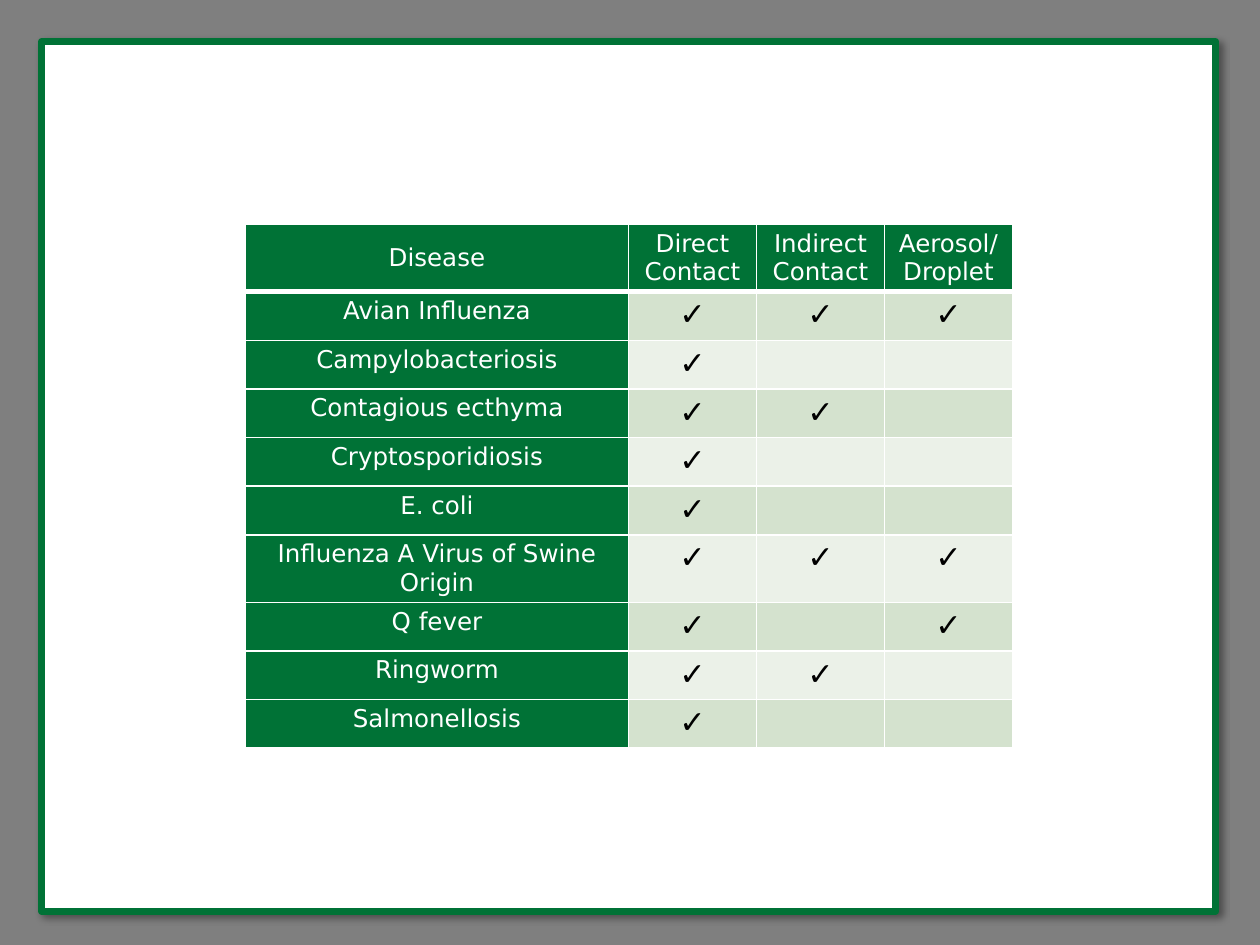
import lxml.etree
import pptx
import pptx.dml.color
import pptx.enum.shapes
import pptx.enum.text
import pptx.oxml
import pptx.oxml.ns
import pptx.util

Cm = pptx.util.Cm
Pt = pptx.util.Pt
RGBColor = pptx.dml.color.RGBColor

GREEN = RGBColor(0x00, 0x72, 0x36)
GRAY = RGBColor(0x7F, 0x7F, 0x7F)
WHITE = RGBColor(0xFF, 0xFF, 0xFF)
BLACK = RGBColor(0x00, 0x00, 0x00)
BANDS = (RGBColor(0xD4, 0xE2, 0xCE), RGBColor(0xEB, 0xF1, 0xE8))

FONT = "DejaVu Sans"
CHECK = "✓"
HEADERS = ("Disease", "Direct Contact", "Indirect Contact", "Aerosol/ Droplet")
# Each disease with its routes: direct contact, indirect contact, aerosol/droplet
DISEASES = (
    ("Avian Influenza", (True, True, True)),
    ("Campylobacteriosis", (True, False, False)),
    ("Contagious ecthyma", (True, True, False)),
    ("Cryptosporidiosis", (True, False, False)),
    ("E. coli", (True, False, False)),
    ("Influenza A Virus of Swine Origin", (True, True, True)),
    ("Q fever", (True, False, True)),
    ("Ringworm", (True, True, False)),
    ("Salmonellosis", (True, False, False)),
)
COLUMN_WIDTHS = (7.72, 2.58, 2.58, 2.58)
ROW_HEIGHT = 0.98


def add_shadow(sp):
    effects = pptx.oxml.parse_xml(
        f'<a:effectLst {pptx.oxml.ns.nsdecls("a")}>'
        f'<a:outerShdw blurRad="{Pt(4)}" dist="{Pt(3)}" dir="2700000" '
        'algn="tl" rotWithShape="0"><a:srgbClr val="000000">'
        '<a:alpha val="40000"/></a:srgbClr></a:outerShdw></a:effectLst>'
    )
    sp.shadow.inherit = False
    empty = sp._element.spPr.find(pptx.oxml.ns.qn("a:effectLst"))
    sp._element.spPr.replace(empty, effects)


def add_frame(s):
    sp = s.shapes.add_shape(
        pptx.enum.shapes.MSO_SHAPE.RECTANGLE,
        Cm(0.84), Cm(0.84), Cm(23.67), Cm(17.53),
    )
    sp.fill.solid()
    sp.fill.fore_color.rgb = WHITE
    sp.line.color.rgb = GREEN
    sp.line.width = Pt(4)
    lxml.etree.SubElement(sp.line._ln, pptx.oxml.ns.qn("a:round"))
    add_shadow(sp)


def set_borders(cell, top, bottom):
    """Draw white borders, with top and bottom widths in points."""
    widths = (("lnL", 1), ("lnR", 1), ("lnT", top), ("lnB", bottom))
    for i, (tag, width) in enumerate(widths):
        line = pptx.oxml.parse_xml(
            f'<a:{tag} {pptx.oxml.ns.nsdecls("a")} w="{Pt(width)}">'
            f'<a:solidFill><a:srgbClr val="{WHITE}"/></a:solidFill></a:{tag}>'
        )
        cell._tc.get_or_add_tcPr().insert(i, line)


def fill_cell(cell, text, fill, color, size, bold=False):
    cell.fill.solid()
    cell.fill.fore_color.rgb = fill
    cell.margin_left = cell.margin_right = Cm(0.19)
    cell.margin_top = cell.margin_bottom = Cm(0.1)
    cell.text = text
    p = cell.text_frame.paragraphs[0]
    p.alignment = pptx.enum.text.PP_ALIGN.CENTER
    p.font.name = FONT
    p.font.size = Pt(size)
    p.font.bold = bold
    p.font.color.rgb = color


def add_disease_table(s):
    table = s.shapes.add_table(
        len(DISEASES) + 1, len(HEADERS), Cm(4.95), Cm(4.52),
        Cm(sum(COLUMN_WIDTHS)), Cm(ROW_HEIGHT * (len(DISEASES) + 1)),
    ).table
    table.first_row = False
    table.horz_banding = False
    for column, width in zip(table.columns, COLUMN_WIDTHS):
        column.width = Cm(width)
    for row in table.rows:
        row.height = Cm(ROW_HEIGHT)

    for c, header in enumerate(HEADERS):
        cell = table.cell(0, c)
        fill_cell(cell, header, GREEN, WHITE, 14)
        cell.vertical_anchor = pptx.enum.text.MSO_ANCHOR.MIDDLE
        set_borders(cell, top=1, bottom=3)

    for r, (disease, routes) in enumerate(DISEASES, start=1):
        fill_cell(table.cell(r, 0), disease, GREEN, WHITE, 14)
        for c, spreads in enumerate(routes, start=1):
            mark = CHECK if spreads else ""
            band = BANDS[(r - 1) % 2]
            fill_cell(table.cell(r, c), mark, band, BLACK, 18, bold=True)
        for c in range(len(HEADERS)):
            set_borders(table.cell(r, c), top=3 if r == 1 else 1, bottom=1)


def main():
    prs = pptx.Presentation()
    prs.slide_width = Cm(25.4)
    prs.slide_height = Cm(19.05)
    s = prs.slides.add_slide(prs.slide_layouts[6])
    s.background.fill.solid()
    s.background.fill.fore_color.rgb = GRAY
    add_frame(s)
    add_disease_table(s)
    prs.save("out.pptx")


if __name__ == "__main__":
    main()
